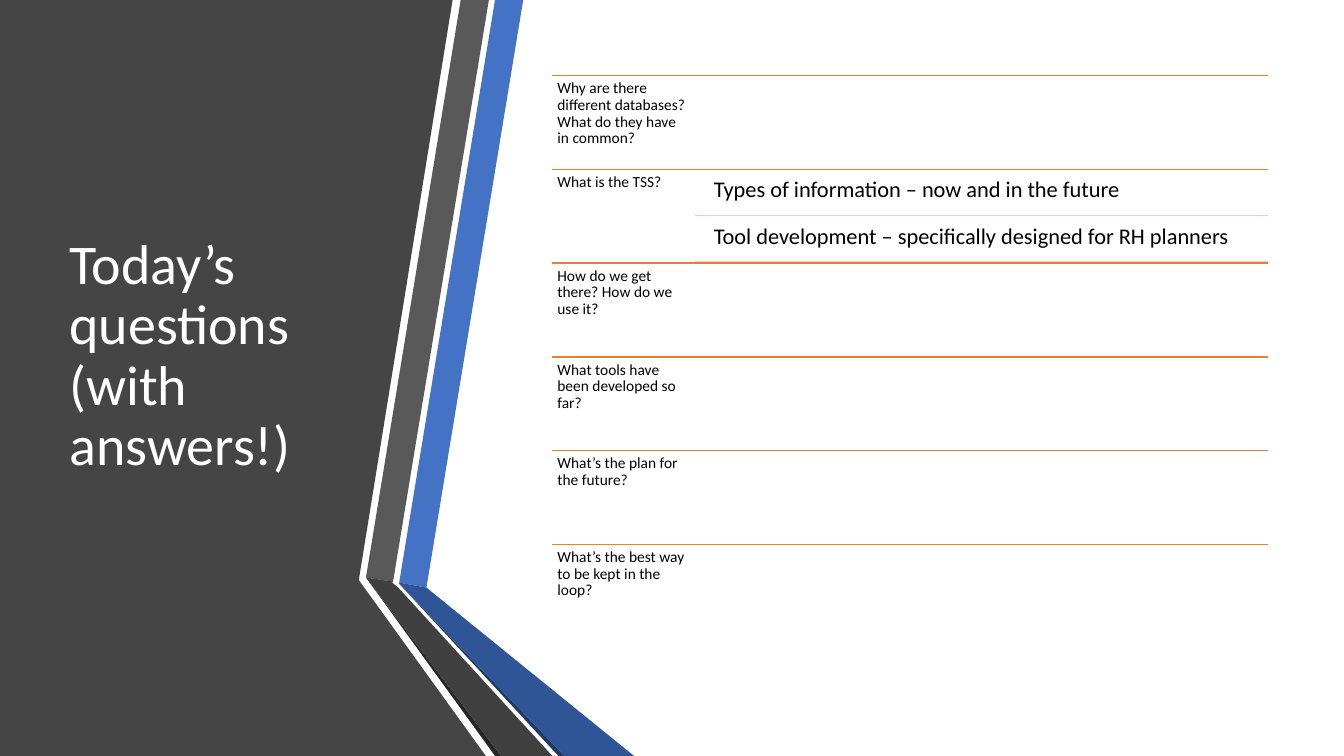
from dataclasses import dataclass

from lxml import etree
from pptx import Presentation
from pptx.dml.color import RGBColor
from pptx.enum.shapes import MSO_CONNECTOR
from pptx.enum.text import MSO_ANCHOR
from pptx.oxml.ns import qn
from pptx.util import Inches, Pt

STRAIGHT = MSO_CONNECTOR.STRAIGHT
TOP, MIDDLE = MSO_ANCHOR.TOP, MSO_ANCHOR.MIDDLE


@dataclass(frozen=True)
class Theme:
    font: str = "Calibri"
    title_size: int = 40
    answer_size: int = 16
    question_size: int = 11
    line_spacing: float = 0.9
    rule_width: int = 1
    light: str = "FFFFFF"
    ink: str = "000000"
    panel: str = "454545"
    blue: str = "4472C4"
    deep_blue: str = "2F5597"
    navy: str = "203864"
    grey: str = "595959"
    charcoal: str = "404040"
    shadow: str = "262626"
    orange: str = "ED7D31"
    peach: str = "F6CCBE"


class Page:
    """Draws on one slide; positions are percentages of its width and height."""

    def __init__(self, deck, theme):
        self.theme = theme
        self.width, self.height = deck.slide_width, deck.slide_height
        self.shapes = deck.slides.add_slide(deck.slide_layouts[6]).shapes

    def point(self, x, y):
        return round(self.width * x / 100), round(self.height * y / 100)

    def polygon(self, points, color):
        first, *rest = [self.point(*corner) for corner in points]
        builder = self.shapes.build_freeform(*first)
        builder.add_line_segments(rest, close=True)
        shape = builder.convert_to_shape()
        shape.shadow.inherit = False
        shape.fill.solid()
        shape.fill.fore_color.rgb = RGBColor.from_string(color)
        shape.line.fill.background()

    def rule(self, left, right, y, color):
        line = self.shapes.add_connector(
            STRAIGHT, *self.point(left, y), *self.point(right, y))
        line.line.color.rgb = RGBColor.from_string(color)
        line.line.width = Pt(self.theme.rule_width)
        etree.SubElement(line._element.spPr, qn("a:effectLst"))

    def text(self, words, left, top, width, height, size, color, insets, anchor=TOP):
        box = self.shapes.add_textbox(
            *self.point(left, top), *self.point(width, height))
        frame = box.text_frame
        frame.text = words
        frame.word_wrap = True
        frame.vertical_anchor = anchor
        frame.margin_left = frame.margin_right = Inches(insets[0])
        frame.margin_top = frame.margin_bottom = Inches(insets[1])
        para = frame.paragraphs[0]
        para.line_spacing = self.theme.line_spacing
        font = para.runs[0].font
        font.name, font.size = self.theme.font, Pt(size)
        font.color.rgb = RGBColor.from_string(color)


# Question list: each question with its answers
QUESTIONS = [
    ("Why are there different databases? What do they have in common?", []),
    ("What is the TSS?", [
        "Types of information – now and in the future",
        "Tool development – specifically designed for RH planners",
    ]),
    ("How do we get there? How do we use it?", []),
    ("What tools have been developed so far?", []),
    ("What’s the plan for the future?", []),
    ("What’s the best way to be kept in the loop?", []),
]

# List grid, in percent of the slide
LIST_LEFT, LIST_RIGHT, LIST_TOP = 41.1, 94.35, 10
QUESTION_WIDTH, ROW_HEIGHT = 10.65, 12.4
ANSWER_LEFT = LIST_LEFT + QUESTION_WIDTH
ANSWER_INDENT, ANSWER_GAP = 0.83, 0.3
ANSWER_HEIGHT, ANSWER_STEP = 5.8, 6.1


def draw_panel(page):
    theme = page.theme
    # Dark title panel
    page.polygon([(0, 0), (33.68, 0), (26.7, 76.73), (36.15, 100), (0, 100)],
                 theme.panel)
    # Upper ribbons
    page.polygon([(29.7, 77.07), (31.73, 77.73), (38.93, 0), (36.83, 0)], theme.blue)
    page.polygon([(36.38, 0), (34.28, 0), (27.23, 76.4), (29.25, 76.93)], theme.grey)
    # Folded lower ribbons and their dark edges
    page.polygon([(27.23, 76.4), (36.83, 100), (37.28, 100)], theme.shadow)
    page.polygon([(29.7, 77.2), (41.55, 100), (42, 100)], theme.navy)
    page.polygon([(29.7, 77.07), (29.7, 77.2), (42, 100), (47.18, 100),
                  (31.73, 77.73)], theme.deep_blue)
    page.polygon([(41.1, 100), (29.63, 77.73), (29.18, 77.07), (29.25, 76.93),
                  (27.23, 76.4), (37.28, 100)], theme.charcoal)


def draw_questions(page):
    theme = page.theme
    for row, (question, answers) in enumerate(QUESTIONS):
        row_top = LIST_TOP + row * ROW_HEIGHT
        page.rule(LIST_LEFT, LIST_RIGHT, row_top, theme.orange)
        page.text(question, LIST_LEFT, row_top, QUESTION_WIDTH, ROW_HEIGHT,
                  theme.question_size, theme.ink, (0.05, 0.05))
        for index, answer in enumerate(answers):
            top = row_top + ANSWER_GAP + index * ANSWER_STEP
            left = ANSWER_LEFT + ANSWER_INDENT
            page.text(answer, left, top, LIST_RIGHT - left, ANSWER_HEIGHT,
                      theme.answer_size, theme.ink, (0.07, 0.07))
            page.rule(ANSWER_LEFT, LIST_RIGHT, top + ANSWER_HEIGHT, theme.peach)


def main():
    deck = Presentation()
    deck.slide_width, deck.slide_height = Inches(13.33), Inches(7.5)
    theme = Theme()
    page = Page(deck, theme)
    draw_panel(page)
    page.text("Today’s questions (with answers!)", 4.43, 10, 22.8, 74.4,
              theme.title_size, theme.light, (0.1, 0.05), MIDDLE)
    draw_questions(page)
    deck.save("out.pptx")


if __name__ == "__main__":
    main()
